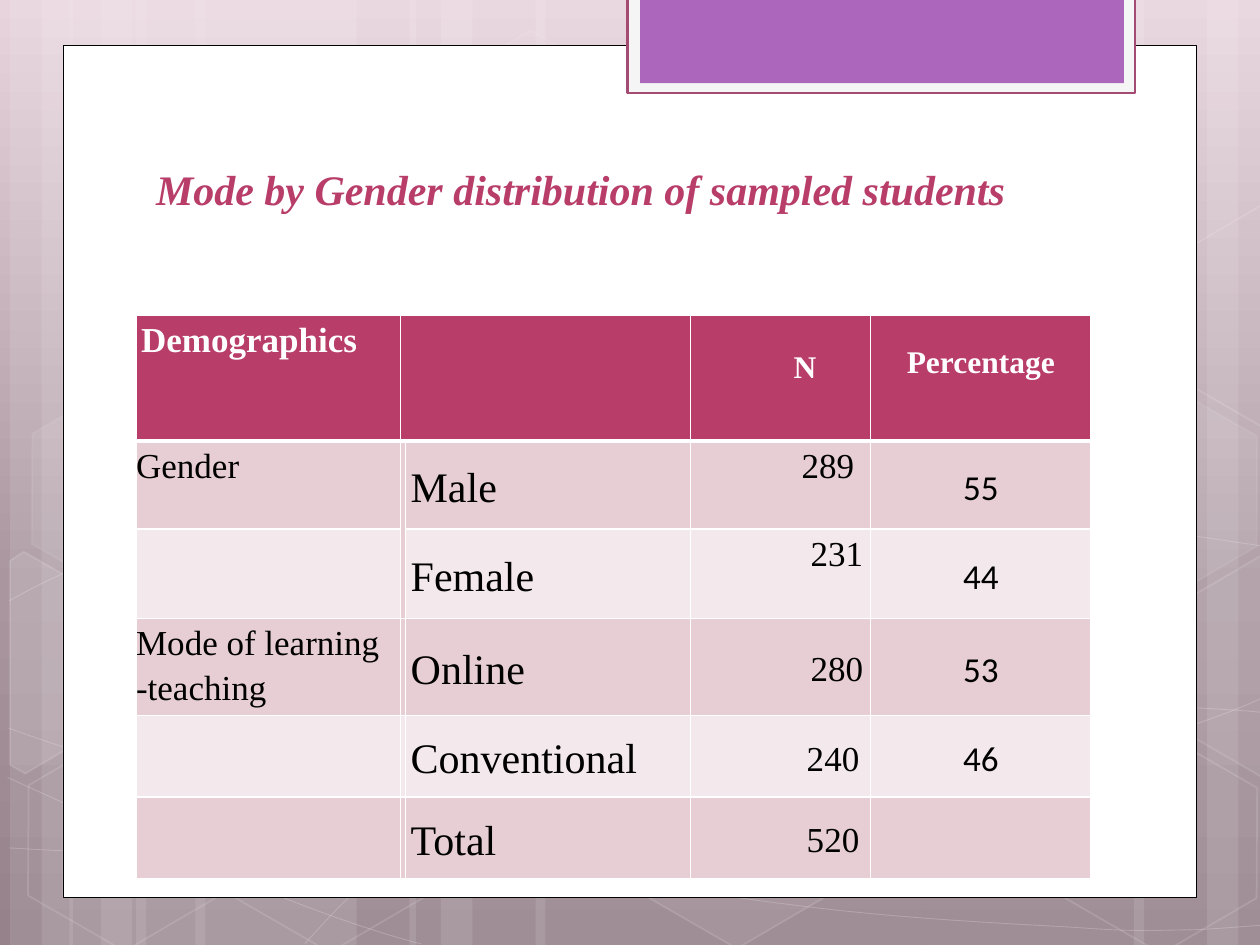
from copy import deepcopy
from pptx import Presentation
from pptx.dml.color import RGBColor
from pptx.enum import shapes, text
from pptx.oxml.ns import qn
from pptx.util import Inches, Pt
from lxml import etree

WHITE, ROSE, BLACK = "FFFFFF", "B83D68", "000000"
SERIF, SANS = "Times New Roman", "Calibri"
TITLE = "Mode by Gender distribution of sampled students"
BACKGROUND = [(0, "E8D4DD"), (0.62, "A9969F"), (1, "96828B")]
BANDS = [(1.08, 1.75), (0.08, 0.5), (0.33, 0.83), (1.55, 1.75), (0.55, 0.5), (0.8, 0.83),
         (7.33, 1.75), (9.58, 0.5), (9, 0.83), (4.25, 3.08), (3.25, 0.5), (3.5, 0.83)]
CURVES = [
    [(0.07, 6.73), (0.61, 6.76), (1.15, 6.79), (1.9, 6.78), (2.65, 6.77), (3.58, 6.75),
     (4.58, 6.65), (5.58, 6.55), (7, 6.36), (7.92, 6.17), (8.83, 5.98), (9.77, 5.68), (10.07, 5.51)],
    [(0.07, 4.77), (0.36, 4.61), (0.65, 4.46), (1.21, 4.31), (1.78, 4.16), (2.59, 3.94),
     (3.47, 3.87), (4.36, 3.8), (5.44, 3.79), (6.54, 3.87), (7.64, 3.95), (9.47, 4.26), (10.07, 4.34)],
    [(0.06, 6.17), (1.27, 6.72), (2.47, 7.27), (3.34, 7.49)],
    [(0.07, 5.78), (0.38, 5.89), (0.7, 6), (1.28, 6.16), (1.86, 6.31), (2.73, 6.56),
     (3.57, 6.73), (4.4, 6.9), (5.45, 7.08), (6.28, 7.18), (7.11, 7.29), (8, 7.33),
     (8.53, 7.36), (9.05, 7.4), (9.19, 7.38), (9.45, 7.38), (9.71, 7.37), (9.89, 7.35), (10.07, 7.34)],
    [(2.42, 7.49), (2.6, 7.29), (2.78, 7.09), (3.02, 6.91), (3.26, 6.73), (3.6, 6.53),
     (3.88, 6.39), (4.16, 6.25), (4.33, 6.19), (4.7, 6.09), (5.06, 5.99), (5.73, 5.85),
     (6.08, 5.78), (6.44, 5.71), (6.49, 5.71), (6.8, 5.69), (7.11, 5.66), (7.6, 5.63),
     (7.94, 5.62), (8.29, 5.61), (8.86, 5.62), (8.86, 5.62), (9.08, 5.62), (9.3, 5.62),
     (9.53, 5.62), (9.71, 5.63), (9.88, 5.64), (9.97, 5.65), (10.06, 5.66), (10.03, 5.65), (10.06, 5.66)],
]
HEXAGONS = [(3.34, 0.36, 4, 8), (4.97, 5.89, 6, 12), (0.11, 5.91, 0, 12),
            (0.14, 3.12, 7, 8), (1.74, 5.92, 0, 12), (7.53, 4.53, 10, 12),
            (8.34, 5.93, 0, 12), (8.34, 3.14, 7, 8)]
CUT_HEXAGONS = [
    (10, [(0.08, 4.45), (0.19, 4.38), (0.96, 4.82), (0.95, 5.7), (0.2, 6.14), (0.08, 6.07)]),
    (4, [(9.26, 4.85), (10.01, 4.41), (10.09, 4.46), (10.09, 6.13), (10.02, 6.17), (9.26, 5.73)]),
    (0, [(9.26, 2.07), (10.01, 1.63), (10.1, 1.68), (10.09, 3.35), (10.02, 3.39), (9.26, 2.95)]),
]
PANELS = [(0.5, 0.36, 9, 6.76, WHITE, BLACK, 0.5),
          (4.98, -0.02, 4.03, 0.76, "F5F5F5", "A34B73", 1.25),
          (5.08, -0.02, 3.84, 0.68, "AC66BB", None, 0)]
COLS = [2.1, 0.04, 2.26, 1.43, 1.75]
HEIGHTS = [1, 0.7, 0.71, 0.71, 0.65, 0.65]
ROWS = [["Demographics", "", "", "N", "Percentage"],
        ["Gender", "", "Male", "289", "55"],
        ["", "", "Female", "231", "44"],
        ["Mode of learning -teaching", "", "Online", "280", "53"],
        ["", "", "Conventional", "240", "46"],
        ["", "", "Total", "520", ""]]
COUNT_INSETS = [0.43, 0.13, 0.06, 0.06, 0.09, 0.09]
HEADER_TOPS = [0, 0, 0, 0.28, 0.24]
HEADER_SIZES = [20, 20, 20, 18, 18]
BODY_SIZES = [20, 20, 24, 20, 20]
LEFT, CENTER, RIGHT = text.PP_ALIGN.LEFT, text.PP_ALIGN.CENTER, text.PP_ALIGN.RIGHT
ALIGNS = [LEFT, LEFT, LEFT, RIGHT, CENTER]
TOP, MIDDLE = text.MSO_ANCHOR.TOP, text.MSO_ANCHOR.MIDDLE


def rgb(color):
    return RGBColor.from_string(color)


def set_alpha(sp, route, alpha):
    clr = sp.element.spPr.find("/".join(qn(tag) for tag in route))
    etree.SubElement(clr, qn("a:alpha")).set("val", str(alpha * 1000))


def style(sp, fill=None, fill_alpha=100, line=None, width=1, line_alpha=100):
    sp.shadow.inherit = False
    if fill and fill_alpha:
        sp.fill.solid()
        sp.fill.fore_color.rgb = rgb(fill)
        if fill_alpha < 100:
            set_alpha(sp, ("a:solidFill", "a:srgbClr"), fill_alpha)
    else:
        sp.fill.background()
    if line:
        sp.line.color.rgb = rgb(line)
        sp.line.width = Pt(width)
        if line_alpha < 100:
            set_alpha(sp, ("a:ln", "a:solidFill", "a:srgbClr"), line_alpha)
    else:
        sp.line.fill.background()


def add_preset(s, kind, *box):
    return s.shapes.add_shape(kind, *map(Inches, box))


def add_outline(s, points, close):
    emu = [(Inches(x), Inches(y)) for x, y in points]
    builder = s.shapes.build_freeform(*emu[0])
    builder.add_line_segments(emu[1:], close=close)
    return builder.convert_to_shape()


def add_curve(s, points):
    sp = add_outline(s, points, False)
    lines = list(sp.element.iter(qn("a:lnTo")))
    for i in range(0, len(lines), 3):
        curve = etree.Element(qn("a:cubicBezTo"))
        lines[i].addprevious(curve)
        for line in lines[i:i + 3]:
            curve.append(line[0])
            line.getparent().remove(line)
    return sp


def format_run(r, font, size, color, bold=False, italic=False):
    r.font.name, r.font.size = font, Pt(size)
    r.font.bold, r.font.italic = bold, italic
    r.font.color.rgb = rgb(color)


def add_borders(cell, widths):
    pr = cell._tc.get_or_add_tcPr()
    for i, (side, width) in enumerate(widths.items()):
        ln = etree.Element(qn("a:ln" + side), w=str(Pt(width)))
        fill = etree.SubElement(ln, qn("a:solidFill"))
        etree.SubElement(fill, qn("a:srgbClr")).set("val", WHITE)
        pr.insert(i, ln)


def paint_background(s):
    fill = s.background.fill
    fill.gradient()
    fill.gradient_angle = 270
    stops = s.element.find(".//" + qn("a:gsLst"))
    stops.append(deepcopy(stops[-1]))
    for stop, (position, color) in zip(fill.gradient_stops, BACKGROUND):
        stop.position = position
        stop.color.rgb = rgb(color)


def add_decoration(s):
    rect = shapes.MSO_SHAPE.RECTANGLE
    for x, w in BANDS:
        style(add_preset(s, rect, x, 0, w, 7.5), WHITE, 10)
    for points in CURVES:
        style(add_curve(s, points), line=WHITE, width=0.5, line_alpha=20)
    for x, y, fill_alpha, line_alpha in HEXAGONS:
        sp = add_preset(s, shapes.MSO_SHAPE.HEXAGON, x, y, 1.75, 1.52)
        sp.adjustments[0] = 0.285
        sp.rotation = 30
        style(sp, WHITE, fill_alpha, WHITE, 1, line_alpha)
    for fill_alpha, points in CUT_HEXAGONS:
        style(add_outline(s, points, True), WHITE, fill_alpha, WHITE, 1, 12)
    for x, y, w, h, fill, line, width in PANELS:
        style(add_preset(s, rect, x, y, w, h), fill, line=line, width=width)


def add_title(s):
    tf = s.shapes.add_textbox(*map(Inches, (1.14, 1.12, 7.68, 0.63))).text_frame
    tf.word_wrap = True
    tf.vertical_anchor = text.MSO_ANCHOR.BOTTOM
    tf.text = TITLE
    format_run(tf.paragraphs[0].runs[0], SERIF, 24, ROSE, True, True)


def fill_cell(cell, row, col, words):
    header = row == 0
    cell.margin_left = Inches(0.04 if col == 2 or header and col == 0 else 0)
    cell.margin_right = Inches(COUNT_INSETS[row] if col == 3 else 0)
    cell.margin_top = Inches(HEADER_TOPS[col] if header else 0)
    cell.margin_bottom = 0
    cell.vertical_anchor = TOP if header or col == 0 or col == 3 and row < 3 else MIDDLE
    cell.fill.solid()
    cell.fill.fore_color.rgb = rgb(ROSE if header else "E6CED4" if row % 2 else "F3E8EB")
    add_borders(cell, {"L": 1, "R": 1, "T": 3 if row == 1 else 1, "B": 3 if header else 1})
    if words:
        cell.text_frame.text = words
        p = cell.text_frame.paragraphs[0]
        p.alignment = ALIGNS[col]
        p.line_spacing = 1 if header and col > 2 else 1.15
        format_run(p.runs[0], SANS if col == 4 and not header else SERIF,
                   (HEADER_SIZES if header else BODY_SIZES)[col], WHITE if header else BLACK, header)


def add_demographics(s):
    box = (1.08, 2.5, sum(COLS), sum(HEIGHTS))
    table = s.shapes.add_table(len(ROWS), len(COLS), *map(Inches, box)).table
    for col, w in zip(table.columns, COLS):
        col.width = Inches(w)
    for row, h in zip(table.rows, HEIGHTS):
        row.height = Inches(h)
    for i, row in enumerate(ROWS):
        for j, words in enumerate(row):
            fill_cell(table.cell(i, j), i, j, words)
    table.cell(0, 1).merge(table.cell(0, 2))
    table.cell(1, 1).merge(table.cell(2, 1))


def main():
    prs = Presentation()
    prs.slide_width, prs.slide_height = Inches(10), Inches(7.5)
    s = prs.slides.add_slide(prs.slide_layouts[6])
    paint_background(s)
    add_decoration(s)
    add_title(s)
    add_demographics(s)
    prs.save("out.pptx")


if __name__ == "__main__":
    main()
